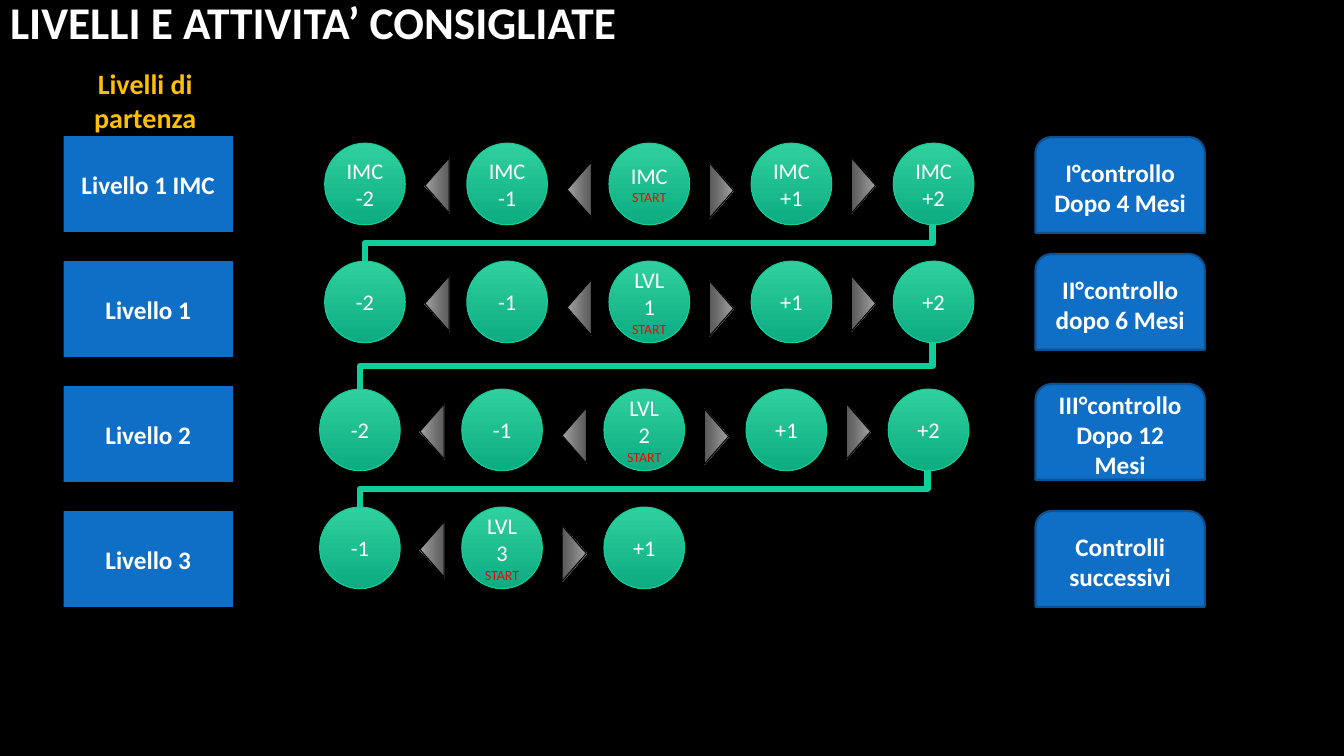
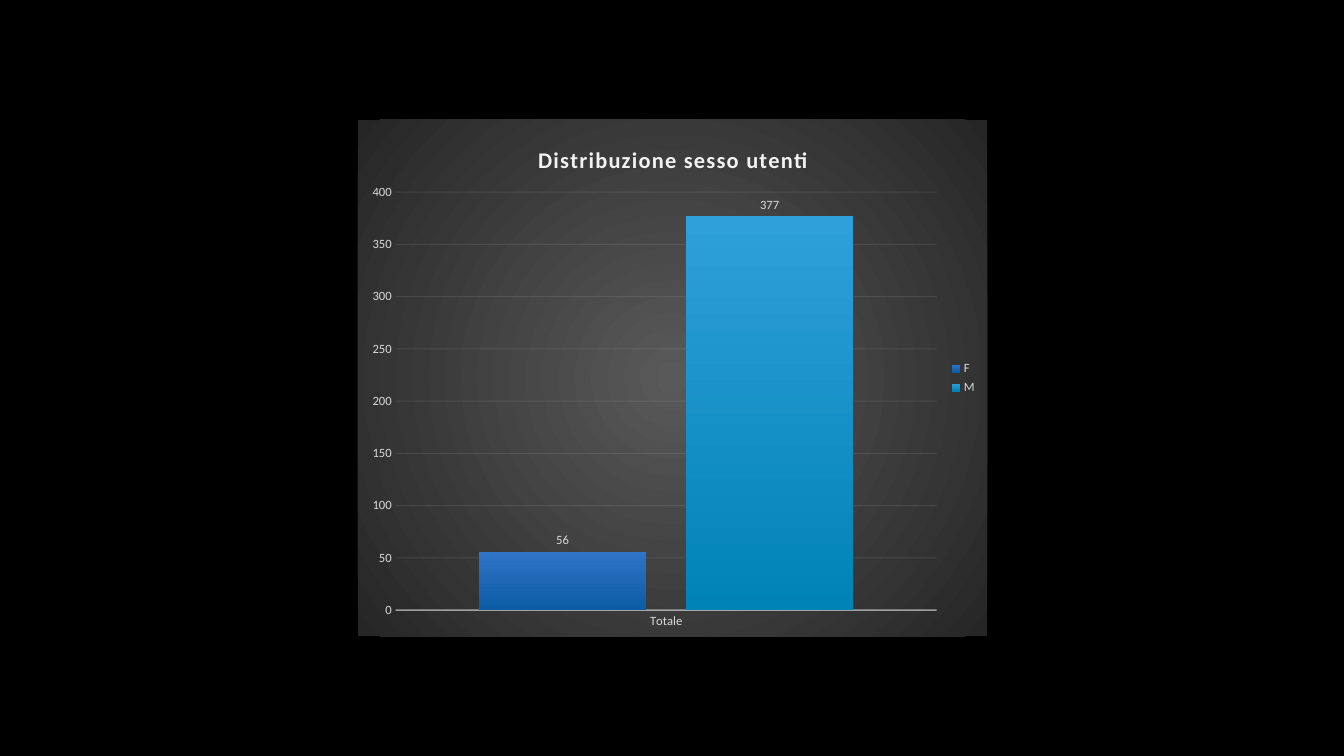
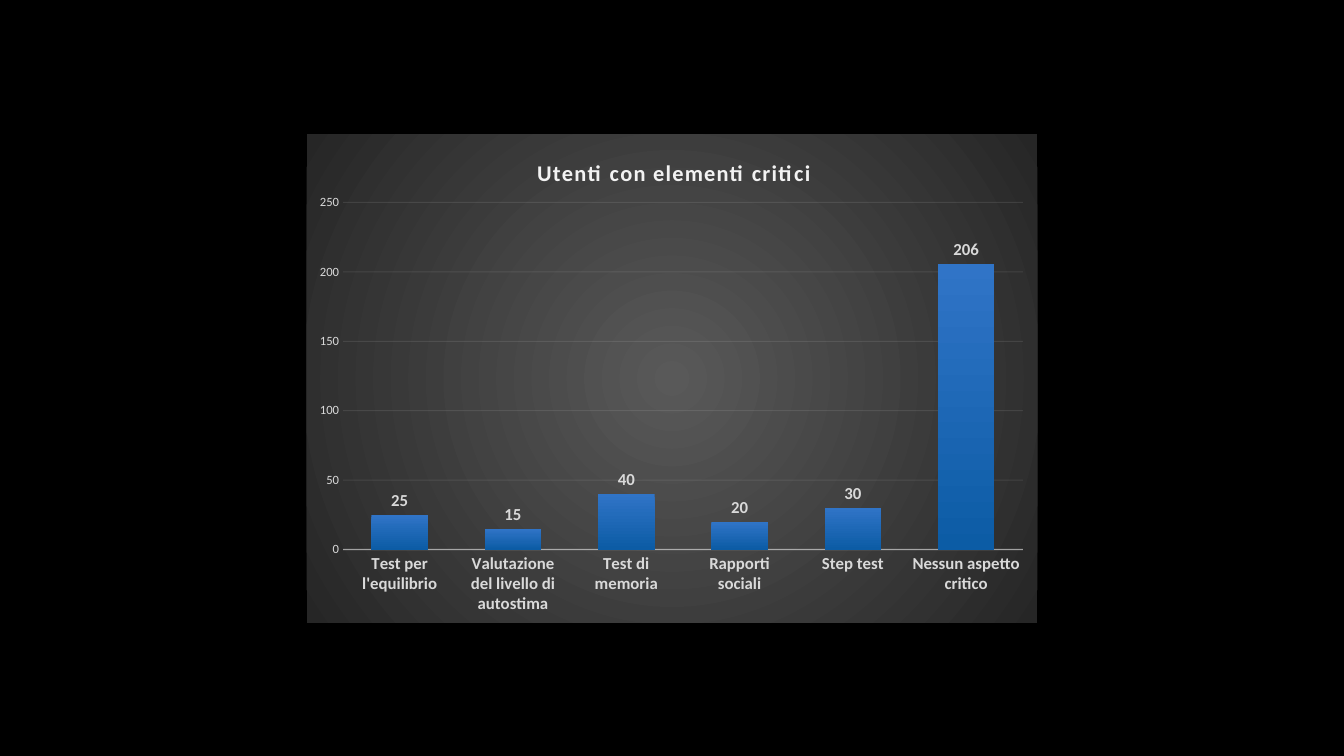
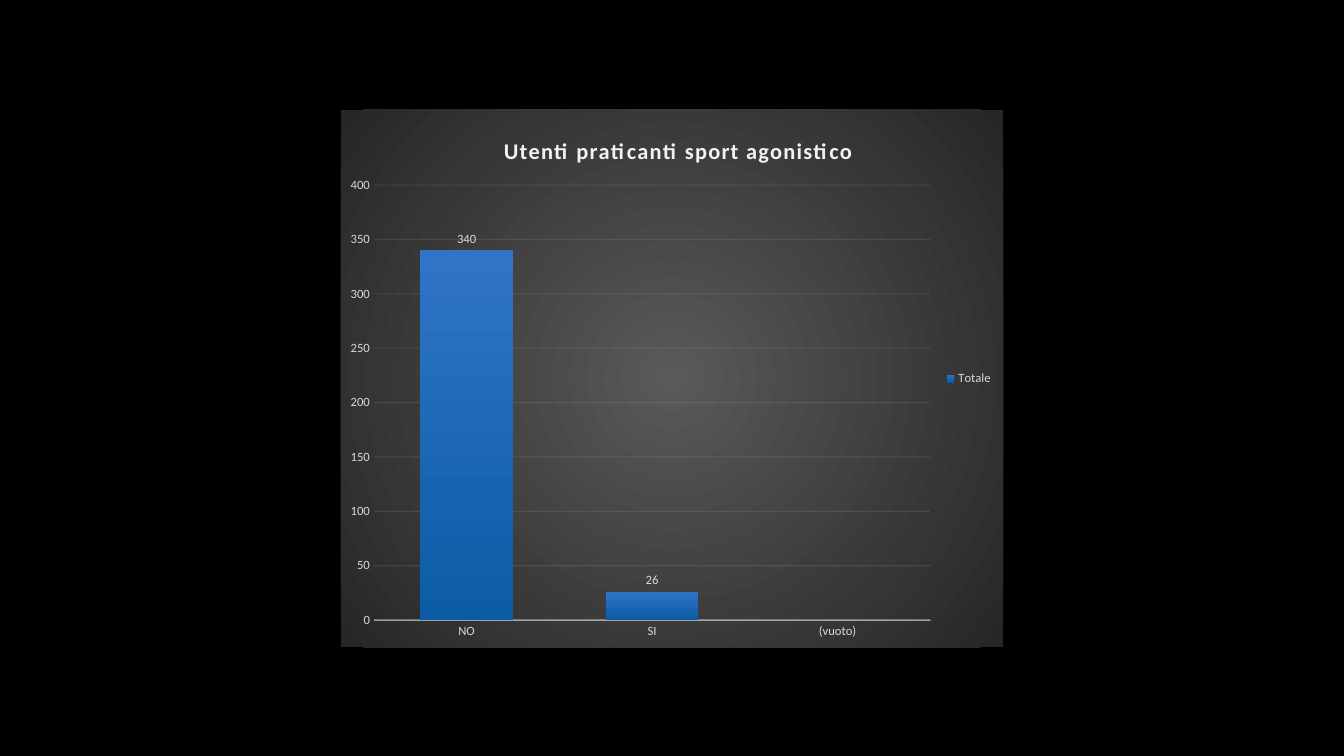
import pptx
import pptx.chart.data
import pptx.dml.color
import pptx.enum.chart
import pptx.enum.shapes
import pptx.enum.text
import pptx.oxml
import pptx.oxml.ns
import pptx.util
from lxml import etree

Inches = pptx.util.Inches
Pt = pptx.util.Pt
qn = pptx.oxml.ns.qn
RGBColor = pptx.dml.color.RGBColor
SHAPE = pptx.enum.shapes.MSO_SHAPE
CENTER = pptx.enum.text.PP_ALIGN.CENTER
MIDDLE = pptx.enum.text.MSO_ANCHOR.MIDDLE

FONT = "Calibri"
BLACK = RGBColor(0x00, 0x00, 0x00)
WHITE = RGBColor(0xFF, 0xFF, 0xFF)
BLUE = RGBColor(0x0F, 0x6F, 0xC6)
BLUE_EDGE = RGBColor(0x0B, 0x52, 0x92)
GREEN = RGBColor(0x10, 0xCF, 0x9B)
GREEN_FADE = (RGBColor(0x30, 0xD0, 0x9E), RGBColor(0x0D, 0xAC, 0x81))
GREY_FADE = (RGBColor(0xA6, 0xA6, 0xA6), RGBColor(0x79, 0x79, 0x79))
BAR_FADES = [
    (RGBColor(0x30, 0x74, 0xC7), RGBColor(0x0C, 0x5C, 0xA5)),
    (RGBColor(0x2F, 0xA0, 0xDA), RGBColor(0x00, 0x83, 0xB5)),
]
RED = RGBColor(0xFF, 0x00, 0x00)
GOLD = RGBColor(0xFF, 0xC0, 0x00)
PALE = RGBColor(0xF2, 0xF2, 0xF2)
LIGHT = RGBColor(0xD9, 0xD9, 0xD9)

TITLE = "LIVELLI E ATTIVITA’ CONSIGLIATE"
LEVELS_HEADING = "Livelli di partenza"
LEVELS = ["Livello 1 IMC", "Livello 1", "Livello 2", "Livello 3"]
CHECKS = [
    (1.36, ["I°controllo", "Dopo 4 Mesi"]),
    (2.52, ["II°controllo dopo 6 Mesi"]),
    (3.81, ["III°controllo", "Dopo 12 Mesi"]),
    (5.07, ["Controlli successivi"]),
]
STEP_ROWS = [
    (3.22, 1.42, 2, ["IMC\v-2", "IMC\v-1", "IMC", "IMC\v+1", "IMC\v+2"]),
    (3.22, 2.59, 2, ["-2", "-1", "LVL\v1", "+1", "+2"]),
    (3.17, 3.86, 2, ["-2", "-1", "LVL\v2", "+1", "+2"]),
    (3.17, 5.03, 1, ["-1", "LVL\v3", "+1"]),
]
CONNECTORS = [
    ((9.25, 2.23), (3.62, 2.59)),
    ((9.25, 3.40), (3.57, 3.86)),
    ((9.20, 4.67), (3.57, 5.03)),
]
BOX_SIZE = (1.68, 0.95)
CIRCLE_SIZE = (0.8, 0.81)
CIRCLE_PITCH = 1.41
ARROW_SIZE = (0.55, 0.24)
ARROW_SHIFT = 0.84
ARROW_DROPS = {-2: 0.30, -1: 0.34, 0: 0.35, 1: 0.30}

CHARTS = [
    {
        "title": "Distribuzione sesso utenti", "title_at": (0.28, 0.04),
        "box": (3.55, 1.19, 6.24, 5.12), "plot": (0.06, 0.14, 0.86, 0.81),
        "categories": ["Totale"], "series": [("F", [56]), ("M", [377])],
        "maximum": 400, "legend": True, "size": 9, "bold": False,
    },
    {
        "title": "Utenti con elementi critici", "title_at": (0.31, 0.04),
        "box": (3.04, 1.33, 7.25, 4.85), "plot": (0.05, 0.14, 0.93, 0.71),
        "categories": ["Test per l'equilibrio", "Valutazione del livello di autostima",
                       "Test di memoria", "Rapporti sociali", "Step test",
                       "Nessun aspetto critico"],
        "series": [("Series 1", [25, 15, 40, 20, 30, 206])],
        "maximum": 250, "legend": False, "size": 12, "bold": True,
    },
    {
        "title": "Utenti praticanti sport agonistico", "title_at": (0.24, 0.04),
        "box": (3.38, 1.09, 6.57, 5.33), "plot": (0.05, 0.14, 0.84, 0.81),
        "categories": ["NO", "SI", "(vuoto)"], "series": [("Totale", [340, 26, None])],
        "maximum": 400, "legend": True, "size": 9, "bold": False,
    },
]
CHART_BACKGROUND = (
    '<c:spPr xmlns:c="http://schemas.openxmlformats.org/drawingml/2006/chart"'
    ' xmlns:a="http://schemas.openxmlformats.org/drawingml/2006/main"><a:gradFill><a:gsLst>'
    '<a:gs pos="0"><a:srgbClr val="595959"/></a:gs>'
    '<a:gs pos="100000"><a:srgbClr val="262626"/></a:gs></a:gsLst>'
    '<a:path path="circle"><a:fillToRect l="50000" t="50000" r="50000" b="50000"/></a:path>'
    '</a:gradFill><a:ln><a:noFill/></a:ln></c:spPr>'
)


def set_font(font, size, color, bold=False):
    font.name = FONT
    font.size = Pt(size)
    font.bold = bold
    font.color.rgb = color


def set_alpha(element, percent):
    for color in element.iter(qn("a:srgbClr")):
        etree.SubElement(color, qn("a:alpha")).set("val", str(percent * 1000))


def fade(fill, colors):
    fill.gradient()
    fill.gradient_angle = 270
    for stop, color in zip(fill.gradient_stops, colors):
        stop.color.rgb = color


def add_shape(slide, kind, left, top, size, line_color=None, line_width=0.75):
    shape = slide.shapes.add_shape(kind, Inches(left), Inches(top), *map(Inches, size))
    shape.shadow.inherit = False
    if line_color is None:
        shape.line.fill.background()
    else:
        shape.line.color.rgb = line_color
        shape.line.width = Pt(line_width)
    return shape


def write(shape, lines, size, color=WHITE, bold=False):
    frame = shape.text_frame
    frame.word_wrap = True
    frame.vertical_anchor = MIDDLE
    for index, line in enumerate(lines):
        paragraph = frame.add_paragraph() if index else frame.paragraphs[0]
        paragraph.text = line
        paragraph.alignment = CENTER
        set_font(paragraph.font, size, color, bold)


def add_box(slide, kind, left, top, lines, line_color=None):
    box = add_shape(slide, kind, left, top, BOX_SIZE, line_color, 1.5)
    box.fill.solid()
    box.fill.fore_color.rgb = BLUE
    write(box, lines, 18, bold=True)


def add_circle(slide, left, top, label, is_start):
    circle = add_shape(slide, SHAPE.OVAL, left, top, CIRCLE_SIZE, GREEN)
    fade(circle.fill, GREEN_FADE)
    frame = circle.text_frame
    frame.margin_left = frame.margin_right = 0
    write(circle, [label, "START"] if is_start else [label], 16)
    if is_start:
        set_font(frame.paragraphs[1].font, 10, RED)


def add_arrow(slide, left, top, points_left):
    arrow = add_shape(slide, SHAPE.ISOSCELES_TRIANGLE, left, top, ARROW_SIZE, BLACK)
    fade(arrow.fill, GREY_FADE)
    set_alpha(arrow._element.findall(".//" + qn("a:gs"))[-1], 74)
    arrow.rotation = 270 if points_left else 90


def add_row_connector(slide, start, end):
    center_x, center_y = (start[0] + end[0]) / 2, (start[1] + end[1]) / 2
    half_width, half_height = (end[1] - start[1]) / 2, (start[0] - end[0]) / 2
    connector = slide.shapes.add_connector(
        pptx.enum.shapes.MSO_CONNECTOR.ELBOW,
        Inches(center_x - half_width), Inches(center_y - half_height),
        Inches(center_x + half_width), Inches(center_y + half_height))
    connector.line.color.rgb = GREEN
    connector.line.width = Pt(4.5)
    properties = connector._element.spPr
    properties.find(qn("a:xfrm")).set("rot", "5400000")
    etree.SubElement(properties, qn("a:effectLst"))


def build_levels_slide(presentation):
    slide = presentation.slides.add_slide(presentation.slide_layouts[5])
    title = slide.shapes.title
    title.left, title.top, title.width, title.height = map(Inches, (0, -0.08, 11.08, 0.58))
    write(title, [TITLE], 32.4, bold=True)
    title.text_frame.paragraphs[0].alignment = pptx.enum.text.PP_ALIGN.LEFT

    for index, level in enumerate(LEVELS):
        add_box(slide, SHAPE.RECTANGLE, 0.63, 1.35 + 1.24 * index, [level])
    for left, top, start, labels in STEP_ROWS:
        for index, label in enumerate(labels):
            circle_left = left + CIRCLE_PITCH * index
            add_circle(slide, circle_left, top, label, index == start)
            if index < len(labels) - 1:
                drop = ARROW_DROPS[index - 2]
                add_arrow(slide, circle_left + ARROW_SHIFT, top + drop, index < start)
    for start, end in CONNECTORS:
        add_row_connector(slide, start, end)
    for top, lines in CHECKS:
        add_box(slide, SHAPE.ROUND_2_SAME_RECTANGLE, 10.27, top, lines, BLUE_EDGE)

    heading = slide.shapes.add_textbox(*map(Inches, (0.63, 0.61, 1.62, 0.77)))
    write(heading, [LEVELS_HEADING], 20, GOLD, True)


def place(parent, index, position, inner=False):
    for layout in parent.findall(qn("c:layout")):
        parent.remove(layout)
    layout = etree.Element(qn("c:layout"))
    manual = etree.SubElement(layout, qn("c:manualLayout"))
    settings = [("layoutTarget", "inner")] if inner else []
    settings += [("xMode", "edge"), ("yMode", "edge")]
    settings += zip("xywh", position)
    for name, value in settings:
        etree.SubElement(manual, qn("c:" + name)).set("val", str(value))
    parent.insert(index, layout)


def build_chart_slide(presentation, content):
    slide = presentation.slides.add_slide(presentation.slide_layouts[6])
    data = pptx.chart.data.CategoryChartData()
    data.categories = content["categories"]
    for name, values in content["series"]:
        data.add_series(name, values)
    chart = slide.shapes.add_chart(
        pptx.enum.chart.XL_CHART_TYPE.COLUMN_CLUSTERED,
        *map(Inches, content["box"]), data).chart
    set_font(chart.font, 10, WHITE)
    chart_element = chart._chartSpace.find(qn("c:chart"))
    chart_element.addnext(pptx.oxml.parse_xml(CHART_BACKGROUND))

    chart.has_title = True
    paragraph = chart.chart_title.text_frame.paragraphs[0]
    run = paragraph.add_run()
    run.text = content["title"]
    set_font(run.font, 16, PALE, True)
    run.font._element.set("spc", "100")
    place(chart_element.find(qn("c:title")), 1, content["title_at"])
    place(chart_element.find(qn("c:plotArea")), 0, content["plot"], True)

    chart.has_legend = content["legend"]
    if content["legend"]:
        chart.legend.position = pptx.enum.chart.XL_LEGEND_POSITION.RIGHT
        chart.legend.include_in_layout = False
        set_font(chart.legend.font, 9, LIGHT)

    category_axis, value_axis = chart.category_axis, chart.value_axis
    for axis in (category_axis, value_axis):
        axis.major_tick_mark = axis.minor_tick_mark = pptx.enum.chart.XL_TICK_MARK.NONE
    set_font(category_axis.tick_labels.font, content["size"], LIGHT, content["bold"])
    set_font(value_axis.tick_labels.font, 9, LIGHT)
    category_axis.format.line.color.rgb = PALE
    category_axis.format.line.width = Pt(1)
    set_alpha(category_axis._element.find(qn("c:spPr")), 54)
    value_axis.minimum_scale = 0
    value_axis.maximum_scale = content["maximum"]
    value_axis.major_unit = 50
    value_axis.format.line.fill.background()
    gridline = value_axis.major_gridlines.format.line
    gridline.color.rgb = PALE
    gridline.width = Pt(0.75)
    set_alpha(value_axis._element.find(qn("c:majorGridlines")), 10)

    plot = chart.plots[0]
    plot.gap_width = 100
    plot.overlap = -24
    plot.vary_by_categories = False
    for series, colors in zip(plot.series, BAR_FADES):
        fade(series.format.fill, colors)
        labels = series.data_labels
        labels.show_value = True
        labels.position = pptx.enum.chart.XL_LABEL_POSITION.OUTSIDE_END
        set_font(labels.font, content["size"], LIGHT, content["bold"])


def main():
    presentation = pptx.Presentation()
    presentation.slide_width = Inches(13.33)
    presentation.slide_height = Inches(7.5)
    background = presentation.slide_master.background.fill
    background.solid()
    background.fore_color.rgb = BLACK
    build_levels_slide(presentation)
    for content in CHARTS:
        build_chart_slide(presentation, content)
    presentation.save("out.pptx")


if __name__ == "__main__":
    main()
